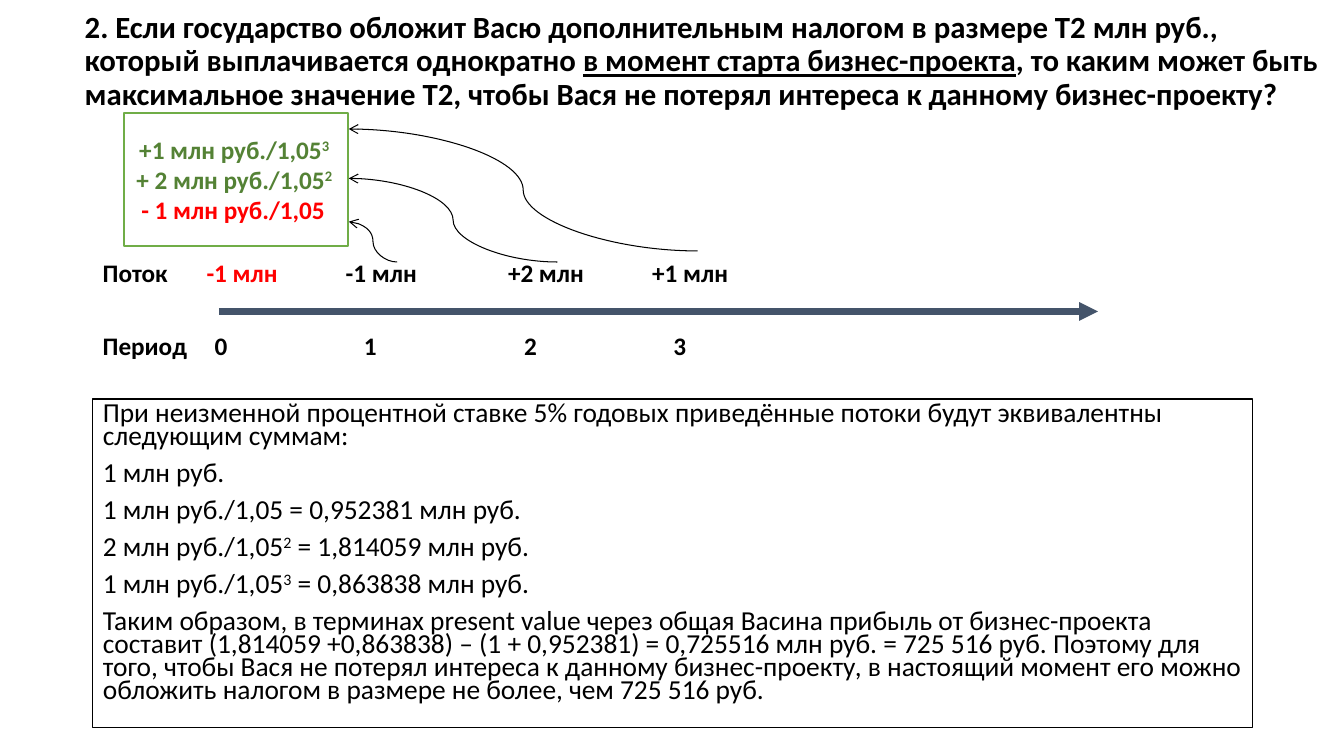
import pptx
import pptx.util
import pptx.dml.color
import pptx.enum.dml
import pptx.enum.shapes
import pptx.enum.text
import pptx.oxml.ns
from lxml import etree

Inches, Pt = pptx.util.Inches, pptx.util.Pt
ALIGN = pptx.enum.text.PP_ALIGN
ANCHOR = pptx.enum.text.MSO_ANCHOR
LINK = pptx.enum.shapes.MSO_CONNECTOR

# Content: a paragraph is a list of (text, style) runs
COLORS = {"black": "000000", "white": "FFFFFF", "red": "FF0000",
          "green": "548235", "frame": "70AD47", "axis": "44546A"}
PLAIN, UNDER, SUPER, RED = {}, {"underline": True}, {"raised": True}, {"color": "red"}

TITLE = [[
    ("2. Если государство обложит Васю дополнительным налогом в размере T2 млн руб., "
     "который выплачивается однократно ", PLAIN),
    ("в момент старта бизнес-проекта", UNDER),
    (", то каким может быть максимальное значение T2, чтобы Вася не потерял интереса "
     "к данному бизнес-проекту?", PLAIN),
]]
SOLUTION = [
    [("При неизменной процентной ставке 5% годовых приведённые потоки будут эквивалентны "
      "следующим суммам:", PLAIN)],
    [("1 млн руб.", PLAIN)],
    [("1 млн руб./1,05 = 0,952381 млн руб.", PLAIN)],
    [("2 млн руб./1,05", PLAIN), ("2", SUPER), (" = 1,814059 млн руб.", PLAIN)],
    [("1 млн руб./1,05", PLAIN), ("3", SUPER), (" = 0,863838 млн руб.", PLAIN)],
    [("Таким образом, в терминах present value через общая Васина прибыль от бизнес-проекта "
      "составит (1,814059 +0,863838) – (1 + 0,952381) = 0,725516 млн руб. = 725 516 руб. "
      "Поэтому для того, чтобы Вася не потерял интереса к данному бизнес-проекту, в настоящий "
      "момент его можно обложить налогом в размере не более, чем 725 516 руб.", PLAIN)],
]
DISCOUNTED = [
    [("+1 млн руб./1,05", PLAIN), ("3 ", SUPER)],
    [("+ 2 млн руб./1,05", PLAIN), ("2 ", SUPER)],
    [("- 1 млн руб./1,05 ", RED)],
]
# Timeline rows: top, width, runs, tab stops from the text edge
TIMELINE = [
    (2.5, 6.79, [("Поток", PLAIN), ("\t-1 млн", RED), ("\t-1 млн\t+2 млн\t+1 млн", PLAIN)],
     (1.03, 2.41, 4.02, 5.45)),
    (3.23, 6.52, [("Период\t0\t1\t2\t3", PLAIN)], (1.11, 2.59, 4.18, 5.66)),
]
# Discounting arrows: start x, start y, end y
ARROW_END_X = 3.46
DISCOUNT_ARROWS = [(6.92, 2.49, 1.28), (3.94, 2.6, 2.2), (5.53, 2.6, 1.77)]


def rgb(name):
    return pptx.dml.color.RGBColor.from_string(COLORS[name])


def add_xml(parent, tag, **attributes):
    return etree.SubElement(parent, pptx.oxml.ns.qn(tag), attributes)


def place(box, left, top, width, height):
    box.left, box.top = Inches(left), Inches(top)
    box.width, box.height = Inches(width), Inches(height)


def write(box, paragraphs, size, bold=True, color="black", align=ALIGN.LEFT,
          anchor=ANCHOR.TOP, spacing=1.0, before=0):
    frame = box.text_frame
    frame.word_wrap = True
    frame.auto_size = pptx.enum.text.MSO_AUTO_SIZE.NONE
    frame.vertical_anchor = anchor
    for index, runs in enumerate(paragraphs):
        para = frame.add_paragraph() if index else frame.paragraphs[0]
        para.alignment, para.line_spacing = align, spacing
        para.space_before = Pt(before)
        for text, style in runs:
            span = para.add_run()
            span.text = text
            font = span.font
            font.name, font.size, font.bold = "Calibri", Pt(size), bold
            font.color.rgb = rgb(style.get("color", color))
            if style.get("underline"):
                font.underline = True
            if style.get("raised"):
                font._element.set("baseline", "30000")


def outline(box, color):
    box.fill.solid()
    box.fill.fore_color.rgb = rgb("white")
    box.line.color.rgb = rgb(color)
    box.line.width = Pt(1)


def add_arrow(page, kind, start, end, color, width, head):
    arrow = page.shapes.add_connector(kind, *map(Inches, start + end))
    arrow.line.color.rgb = rgb(color)
    arrow.line.width = Pt(width)
    add_xml(arrow.line._get_or_add_ln(), "a:tailEnd", type=head)
    add_xml(arrow._element.spPr, "a:effectLst")


def main():
    deck = pptx.Presentation()
    deck.slide_width, deck.slide_height = Inches(13.33), Inches(7.5)
    page = deck.slides.add_slide(deck.slide_layouts[1])

    # Question
    title = page.shapes.title
    place(title, 0.74, 0.14, 12.59, 0.95)
    write(title, TITLE, 22, anchor=ANCHOR.MIDDLE, spacing=0.9)

    # Solution
    body = page.placeholders[1]
    place(body, 0.92, 3.96, 11.5, 3.26)
    outline(body, "black")
    write(body, SOLUTION, 19.6, bold=False, spacing=0.7, before=10)
    for para in body.text_frame.paragraphs:
        properties = para._p.get_or_add_pPr()
        properties.set("marL", "0")
        properties.set("indent", "0")
        add_xml(properties, "a:buNone")

    # Timeline
    for top, width, runs, stops in TIMELINE:
        row = page.shapes.add_textbox(Inches(0.92), Inches(top), Inches(width), Inches(0.4))
        write(row, [runs], 18)
        tabs = add_xml(row.text_frame.paragraphs[0]._p.get_or_add_pPr(), "a:tabLst")
        for stop in stops:
            add_xml(tabs, "a:tab", pos=str(Inches(stop)), algn="l")
    add_arrow(page, LINK.STRAIGHT, (2.17, 3.09), (10.89, 3.09), "axis", 4.5, "triangle")

    # Discounted flows
    flows = page.shapes.add_shape(pptx.enum.shapes.MSO_SHAPE.RECTANGLE,
                                  Inches(1.23), Inches(1.12), Inches(2.22), Inches(1.32))
    flows.shadow.inherit = False
    outline(flows, "frame")
    write(flows, DISCOUNTED, 18, color="green", align=ALIGN.CENTER, anchor=ANCHOR.MIDDLE)
    for start_x, start_y, end_y in DISCOUNT_ARROWS:
        add_arrow(page, LINK.CURVE, (start_x, start_y), (ARROW_END_X, end_y),
                  "black", 0.75, "arrow")

    deck.save("out.pptx")


if __name__ == "__main__":
    main()
